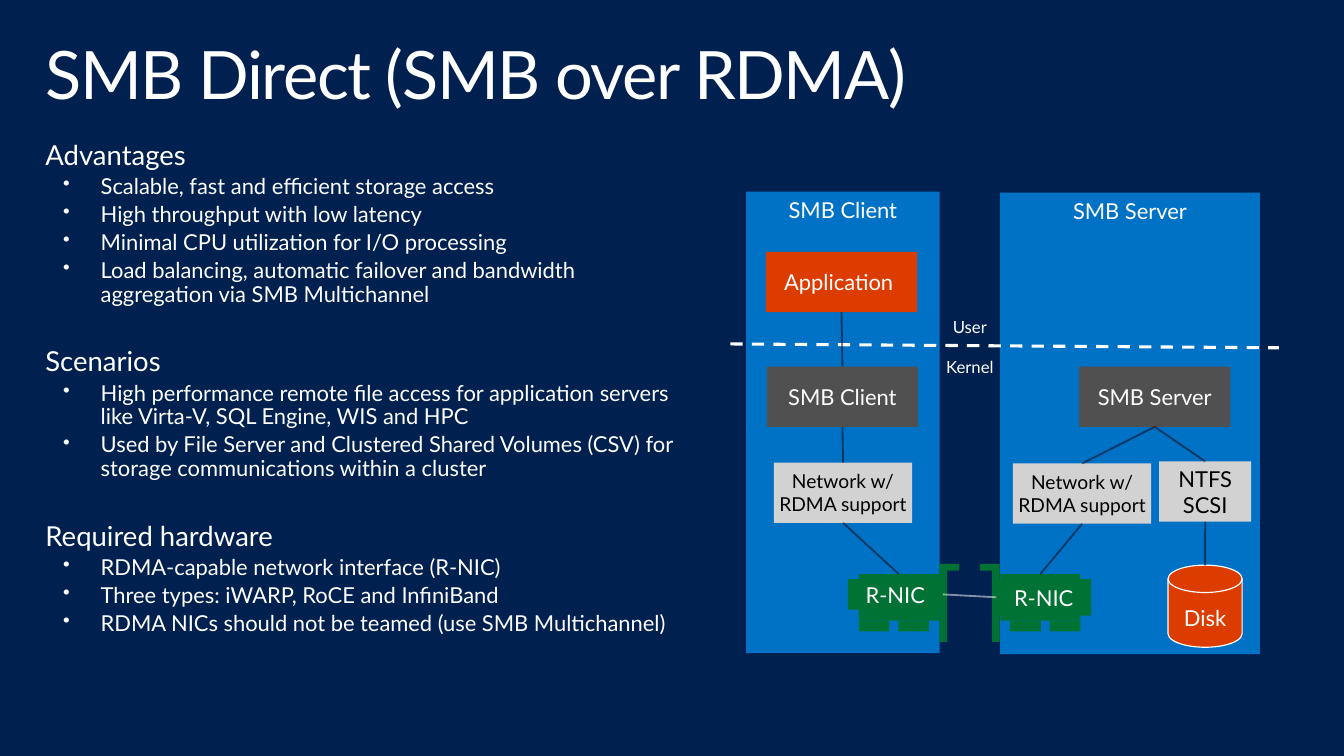
from pptx import Presentation
from pptx.dml.color import RGBColor
from pptx.enum.dml import MSO_LINE as Dash
from pptx.enum.shapes import MSO_CONNECTOR as Link, MSO_SHAPE as Kind
from pptx.enum.text import MSO_ANCHOR as Anchor, PP_ALIGN as Align
from pptx.util import Pt
from lxml import etree

FONT = "Lato"
NAVY, BLUE, RED, GREEN = "002050", "0072C6", "DC3C00", "007233"
DARK, PALE, WHITE, BLACK = "505050", "D2D2D2", "FFFFFF", "000000"
DRAW = "{http://schemas.openxmlformats.org/drawingml/2006/main}"

TITLE = "SMB Direct (SMB over RDMA)"
TOPICS = {
    "Advantages": [
        "Scalable, fast and efficient storage access",
        "High throughput with low latency",
        "Minimal CPU utilization for I/O processing",
        "Load balancing, automatic failover and bandwidth aggregation via SMB Multichannel",
    ],
    "Scenarios": [
        "High performance remote file access for application servers "
        "like Virta-V, SQL Engine, WIS and HPC",
        "Used by File Server and Clustered Shared Volumes (CSV) for "
        "storage communications within a cluster",
    ],
    "Required hardware": [
        "RDMA-capable network interface (R-NIC)",
        "Three types: iWARP, RoCE and InfiniBand",
        "RDMA NICs should not be teamed (use SMB Multichannel)",
    ],
}

# left, top, width, height, fill, text, size, text colour
PANES = [
    (543.6, 139.7, 141.1, 336.2, BLUE, "SMB Client", 16, WHITE),
    (728.6, 140.4, 189.4, 336.2, BLUE, "SMB Server", 16, WHITE),
]
BOXES = {
    "app": (558, 183.6, 110.2, 43.9, RED, "Application ", 16, WHITE),
    "client": (558.7, 267.1, 110.2, 43.9, DARK, "SMB Client", 16, WHITE),
    "server": (786.2, 267.1, 110.2, 43.9, DARK, "SMB Server", 16, WHITE),
    "net1": (563.8, 337, 100.8, 43.9, PALE, "Network w/\nRDMA support", 14, BLACK),
    "net2": (738, 337.7, 100.8, 43.9, PALE, "Network w/\nRDMA support", 14, BLACK),
    "ntfs": (844.6, 336.2, 67, 43.9, PALE, "NTFS\nSCSI", 16, BLACK),
}
LINKS = [
    ("app", "client"), ("client", "net1"), ("net1", "nic1"),
    ("server", "net2"), ("server", "ntfs"), ("net2", "nic2"), ("ntfs", "disk"),
]
AXIS = 706.4  # the two network cards mirror each other about this x
CARD = [  # body, then its two feet
    (625.7, 418.3, 58.3, 33.9),
    (625.7, 452.2, 22.3, 7.9),
    (654.5, 452.2, 22.3, 7.9),
]
BRACKET = (684.4, 410.8, 14.4, 56.9)

deck = Presentation()
deck.slide_width, deck.slide_height = Pt(979.2), Pt(550.8)
slide = deck.slides.add_slide(deck.slide_layouts[6])
shapes = slide.shapes


def paint(fill, color):
    fill.solid()
    fill.fore_color.rgb = RGBColor.from_string(color)


def style(par, size, color):
    for run in par.runs:
        run.font.name, run.font.size = FONT, Pt(size)
        run.font.color.rgb = RGBColor.from_string(color)


def pad(frame, side, top, bottom):
    frame.margin_left = frame.margin_right = Pt(side)
    frame.margin_top, frame.margin_bottom = Pt(top), Pt(bottom)


def add(node, tag, **attrs):
    """Append a DrawingML child element."""
    etree.SubElement(node, DRAW + tag, attrs)


def block(home, kind, left, top, wide, high, fill):
    """Add a plain filled shape without outline or shadow."""
    shape = home.add_shape(kind, Pt(left), Pt(top), Pt(wide), Pt(high))
    shape.shadow.inherit = False
    paint(shape.fill, fill)
    shape.line.fill.background()
    return shape


def label(shape, text, size, color, anchor=Anchor.MIDDLE, top=3.6, bottom=3.6):
    frame = shape.text_frame
    frame.text, frame.word_wrap = text, True
    frame.vertical_anchor = anchor
    pad(frame, 0, top, bottom)
    for par in frame.paragraphs:
        par.alignment = Align.CENTER
        style(par, size, color)


def box(left, top, wide, high, fill, text, size, color, home=shapes, anchor=Anchor.MIDDLE):
    shape = block(home, Kind.RECTANGLE, left, top, wide, high, fill)
    label(shape, text, size, color, anchor)
    return shape


def textbox(left, top, wide, high, side, edge):
    frame = shapes.add_textbox(Pt(left), Pt(top), Pt(wide), Pt(high)).text_frame
    frame.word_wrap = True
    pad(frame, side, edge, edge)
    return frame


def line(start, end, color, width):
    link = shapes.add_connector(Link.STRAIGHT, *start, *end)
    paint(link.line.fill, color)
    link.line.width = Pt(width)
    add(link.element.spPr, "effectLst")
    return link


def thin(start, end, color):
    """Add a half-transparent link."""
    link = line(start, end, color, 1.35)
    add(link.element.spPr.find(f".//{DRAW}srgbClr"), "alpha", val="50000")


def spot(shape, across, down):
    """Point at the given fractions of a shape's width and height."""
    return int(shape.left + shape.width * across), int(shape.top + shape.height * down)


def card(mirror, high):
    """Draw a network card; return its body and its label."""
    home = shapes.add_group_shape().shapes

    def place(left, wide):
        return 2 * AXIS - left - wide if mirror else left

    parts = [block(home, Kind.RECTANGLE, place(x, w), y, w, h, GREEN) for x, y, w, h in CARD]
    x, y, w, h = BRACKET
    bracket = block(home, Kind.CORNER, place(x, w), y, w, h, GREEN)
    bracket.adjustments[0], bracket.adjustments[1] = 0.34, 0.39
    xfrm = bracket.element.spPr.find(DRAW + "xfrm")
    xfrm.set("flipV", "1")
    if mirror:
        xfrm.set("flipH", "1")
    name = box(place(617.8, 69.1), 421.9, 69.1, high, GREEN, "R-NIC", 16, WHITE, home)
    return parts[0], name


paint(slide.background.fill, NAVY)

for pane in PANES:
    box(*pane, anchor=Anchor.TOP)
line((Pt(532.1), Pt(250.6)), (Pt(931.7), Pt(253.4)), WHITE, 2.25).line.dash_style = Dash.DASH

modes = textbox(681.8, 227.5, 49.7, 52.6, 0, 3.6)
modes.text = "User\nKernel"
modes.paragraphs[1].space_before = Pt(14.6)
for par in modes.paragraphs:
    par.alignment = Align.CENTER
    style(par, 12.2, WHITE)

nodes = {key: box(*data) for key, data in BOXES.items()}
disk = block(shapes, Kind.FLOWCHART_MAGNETIC_DISK, 851, 411.8, 54, 59.8, RED)
paint(disk.line.fill, WHITE)
disk.line.width = Pt(0.85)
label(disk, "Disk", 16, WHITE, top=7, bottom=0)
nodes["disk"] = disk
nodes["nic1"], name1 = card(False, 22.3)
nodes["nic2"], name2 = card(True, 26.6)

for start, end in LINKS:
    thin(spot(nodes[start], 0.5, 1), spot(nodes[end], 0.5, 0), BLACK)
thin(spot(name1, 1, 0.5), spot(name2, 0, 0.5), WHITE)

title = textbox(21.6, 23, 936, 72, 11.5, 7.2)
title.text = TITLE
head = title.paragraphs[0]
head.line_spacing = 0.9
style(head, 48.6, WHITE)
head.runs[0]._r.get_or_add_rPr().set("spc", "-100")

body = textbox(21.6, 95.8, 484.6, 401, 11.5, 7.2)
rows = []
for topic, points in TOPICS.items():
    rows += [(topic, False)] + [(point, True) for point in points]
body.text = "\n".join(text for text, _ in rows)
for i, (par, (_, point)) in enumerate(zip(body.paragraphs, rows)):
    par.line_spacing = 0.9
    par.space_before = Pt(3.2 if point else 30 if i else 0)
    style(par, 16 if point else 20, WHITE)
    if point:
        props = par._p.get_or_add_pPr()
        props.set("marL", str(Pt(40.3)))
        props.set("indent", str(-Pt(27.4)))
        add(props, "buSzPct", val="90000")
        add(props, "buChar", char="•")

deck.save("out.pptx")
